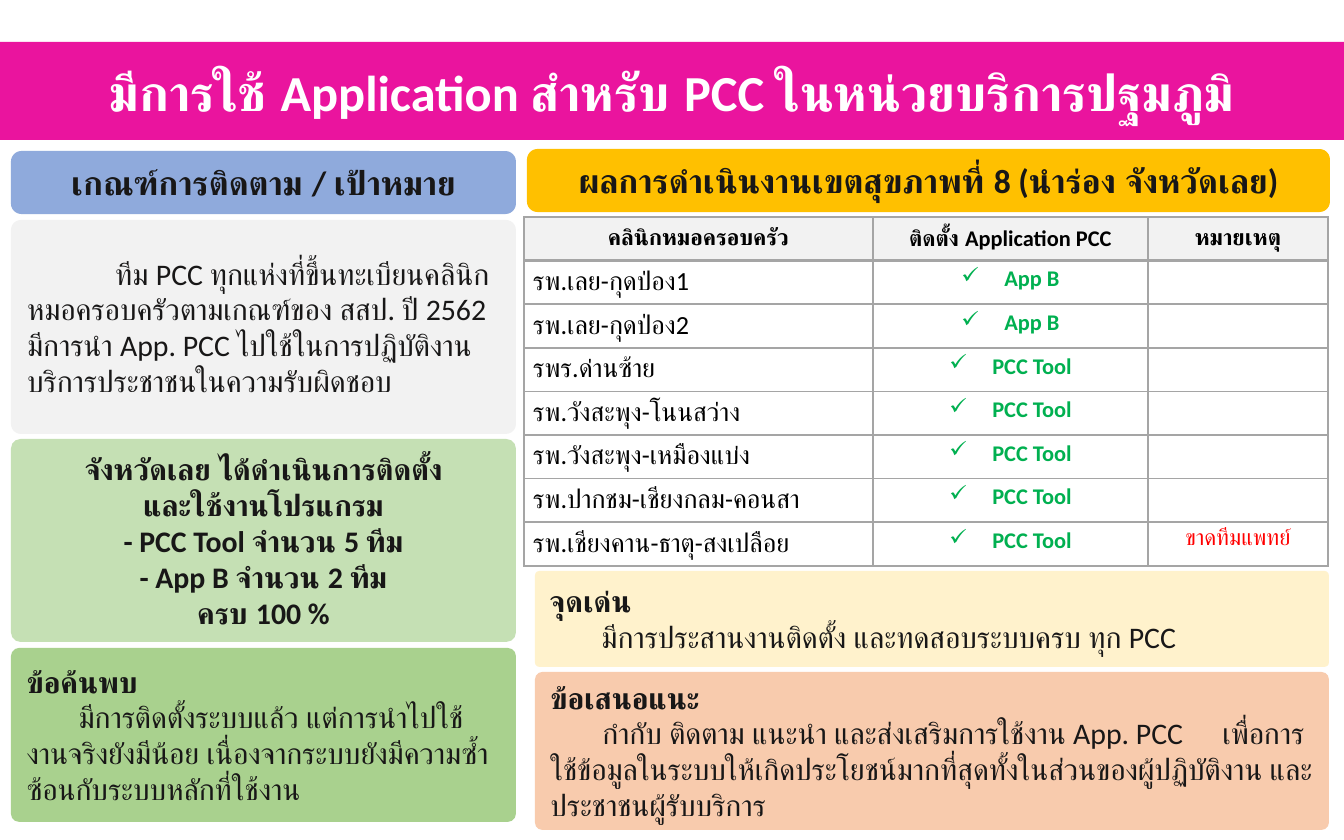
from pptx import Presentation
from pptx.dml.color import RGBColor
from pptx.enum.shapes import MSO_SHAPE
from pptx.enum.text import MSO_ANCHOR, PP_ALIGN
from pptx.oxml.xmlchemy import OxmlElement
from pptx.util import Pt

EMU_PER_PX = 914400 / 134.4
FONT = "Calibri"
RECT, ROUND = MSO_SHAPE.RECTANGLE, MSO_SHAPE.ROUNDED_RECTANGLE
LEFT, CENTER = PP_ALIGN.LEFT, PP_ALIGN.CENTER
TOP, MIDDLE = MSO_ANCHOR.TOP, MSO_ANCHOR.MIDDLE
PANEL_CORNER = 0.047
COLORS = {
    "pink": "EA149E", "blue": "8FAADC", "gray": "F2F2F2", "amber": "FFC000",
    "light_green": "C5E0B4", "green": "A9D18E", "peach": "F8CBAD",
    "cream": "FFF2CC", "white": "FFFFFF", "ink": "181717", "black": "000000",
    "check": "00B050", "red": "FF0000", "border": "A5A5A5",
}
TABLE_HEADERS = ["คลินิกหมอครอบครัว", "ติดตั้ง Application PCC", "หมายเหตุ"]
CLINICS = [
    ("รพ.เลย-กุดป่อง1", "App B", ""),
    ("รพ.เลย-กุดป่อง2", "App B", ""),
    ("รพร.ด่านซ้าย", "PCC Tool", ""),
    ("รพ.วังสะพุง-โนนสว่าง", "PCC Tool", ""),
    ("รพ.วังสะพุง-เหมืองแบ่ง", "PCC Tool", ""),
    ("รพ.ปากชม-เชียงกลม-คอนสา", "PCC Tool", ""),
    ("รพ.เชียงคาน-ธาตุ-สงเปลือย", "PCC Tool", "ขาดทีมแพทย์"),
]


def px(length):
    return round(length * EMU_PER_PX)


def color(name):
    return RGBColor.from_string(COLORS[name])


def add_run(paragraph, text, size, ink="ink", bold=False):
    run = paragraph.add_run()
    run.text = text
    run.font.name = FONT
    run.font.size = Pt(size)
    run.font.bold = bold
    run.font.color.rgb = color(ink)


def set_indent(paragraph, first_line, margin=0):
    properties = paragraph._p.get_or_add_pPr()
    properties.set("marL", str(px(margin)))
    properties.set("indent", str(px(first_line)))
    return properties


def add_tab_stop(paragraph, position):
    stops = OxmlElement("a:tabLst")
    stop = OxmlElement("a:tab")
    stop.set("pos", str(px(position)))
    stop.set("algn", "l")
    stops.append(stop)
    paragraph._p.get_or_add_pPr().append(stops)


def add_panel(slide, box, fill, kind=ROUND, corner=None):
    """Add a filled box and return its text frame."""
    panel = slide.shapes.add_shape(kind, *map(px, box))
    panel.shadow.inherit = False
    panel.fill.solid()
    panel.fill.fore_color.rgb = color(fill)
    panel.line.fill.background()
    if corner is not None:
        panel.adjustments[0] = corner
    frame = panel.text_frame
    frame.word_wrap = True
    frame.vertical_anchor = MIDDLE
    return frame


def add_heading(slide, box, fill, text, size=18, ink="ink", kind=ROUND):
    paragraph = add_panel(slide, box, fill, kind).paragraphs[0]
    paragraph.alignment = CENTER
    add_run(paragraph, text, size, ink, bold=True)


def add_summary(slide, box, fill, lines):
    frame = add_panel(slide, box, fill, corner=PANEL_CORNER)
    for index, line in enumerate(lines):
        paragraph = frame.add_paragraph() if index else frame.paragraphs[0]
        paragraph.alignment = CENTER
        add_run(paragraph, line, 16, bold=True)


def add_note(slide, box, fill, body, title="", indent=52, tab=None):
    """Add a panel with an optional bold title and an indented paragraph."""
    frame = add_panel(slide, box, fill, corner=PANEL_CORNER)
    paragraph = frame.paragraphs[0]
    if title:
        paragraph.alignment = LEFT
        add_run(paragraph, title, 16, bold=True)
        paragraph = frame.add_paragraph()
    paragraph.alignment = LEFT
    set_indent(paragraph, indent)
    if tab:
        add_tab_stop(paragraph, tab)
    add_run(paragraph, body, 16)


def set_borders(cell, top, bottom):
    properties = cell._tc.get_or_add_tcPr()
    widths = {"a:lnL": 1, "a:lnR": 1, "a:lnT": top, "a:lnB": bottom}
    for index, (tag, width) in enumerate(widths.items()):
        line = OxmlElement(tag)
        line.set("w", str(Pt(width)))
        fill = OxmlElement("a:solidFill")
        value = OxmlElement("a:srgbClr")
        value.set("val", COLORS["border"])
        fill.append(value)
        line.append(fill)
        properties.insert(index, line)


def add_check_bullet(paragraph):
    properties = set_indent(paragraph, -43, margin=43)
    bullet = OxmlElement("a:buChar")
    bullet.set("char", "✓")
    properties.append(bullet)


def fill_cell(cell, text, size, ink, bold, align, header):
    cell.fill.solid()
    cell.fill.fore_color.rgb = color("gray" if header else "white")
    cell.margin_left = cell.margin_right = px(9)
    cell.margin_top = cell.margin_bottom = px(5)
    cell.vertical_anchor = MIDDLE if header else TOP
    paragraph = cell.text_frame.paragraphs[0]
    paragraph.alignment = align
    if text:
        add_run(paragraph, text, size, ink, bold)
    else:
        end = OxmlElement("a:endParaRPr")
        end.set("sz", str(size * 100))
        paragraph._p.append(end)
    return paragraph


def add_clinic_table(slide, box, column_widths):
    rows = [TABLE_HEADERS, *CLINICS]
    table = slide.shapes.add_table(len(rows), len(column_widths), *map(px, box)).table
    table.first_row = table.horz_banding = False
    for column, width in zip(table.columns, column_widths):
        column.width = px(width)
    body_styles = [(14, "black", False, LEFT), (12, "check", True, CENTER),
                   (12, "red", False, CENTER)]
    header_style = (12, "black", True, CENTER)
    for r, texts in enumerate(rows):
        table.rows[r].height = px(box[3] / len(rows))
        header = r == 0
        for c, text in enumerate(texts):
            cell = table.cell(r, c)
            style = header_style if header else body_styles[c]
            paragraph = fill_cell(cell, text, *style, header)
            if c == 1 and not header:
                add_check_bullet(paragraph)
            set_borders(cell, top=2 if r == 1 else 1, bottom=2 if header else 1)


def add_criteria_column(slide, x, width):
    add_heading(slide, (x, 151, width, 63), "blue", "เกณฑ์การติดตาม / เป้าหมาย")
    add_note(slide, (x, 220, width, 214), "gray",
             "ทีม PCC ทุกแห่งที่ขึ้นทะเบียนคลินิกหมอครอบครัวตามเกณฑ์ของ สสป. ปี 2562 "
             "มีการนำ App. PCC ไปใช้ในการปฏิบัติงานบริการประชาชนในความรับผิดชอบ", indent=88)
    add_summary(slide, (x, 439, width, 203), "light_green",
                ["จังหวัดเลย ได้ดำเนินการติดตั้ง", "และใช้งานโปรแกรม",
                 "- PCC Tool จำนวน 5 ทีม", "- App B จำนวน 2 ทีม", "ครบ 100 %"])
    add_note(slide, (x, 648, width, 174), "green",
             "มีการติดตั้งระบบแล้ว แต่การนำไปใช้งานจริงยังมีน้อย "
             "เนื่องจากระบบยังมีความซ้ำซ้อนกับระบบหลักที่ใช้งาน", "ข้อค้นพบ")


def add_results_column(slide, x):
    add_heading(slide, (x + 3, 149, 803, 63), "amber",
                "ผลการดำเนินงานเขตสุขภาพที่ 8 (นำร่อง จังหวัดเลย)")
    add_clinic_table(slide, (x, 217, 804, 349), [349, 275, 180])
    add_note(slide, (x + 11, 571, 794, 96), "cream",
             "มีการประสานงานติดตั้ง และทดสอบระบบครบ ทุก PCC", "จุดเด่น")
    add_note(slide, (x + 11, 672, 794, 158), "peach",
             "กำกับ ติดตาม แนะนำ และส่งเสริมการใช้งาน App. PCC\tเพื่อการใช้ข้อมูลในระบบ"
             "ให้เกิดประโยชน์มากที่สุดทั้งในส่วนของผู้ปฏิบัติงาน และประชาชนผู้รับบริการ",
             "ข้อเสนอแนะ", tab=667)


def main():
    deck = Presentation()
    deck.slide_width, deck.slide_height = px(1344), px(840)
    slide = deck.slides.add_slide(deck.slide_layouts[6])
    add_heading(slide, (0, 42, 1344, 98), "pink",
                "มีการใช้ Application สำหรับ PCC ในหน่วยบริการปฐมภูมิ", 27, "white", RECT)
    add_criteria_column(slide, 11, 505)
    add_results_column(slide, 524)
    deck.save("out.pptx")


if __name__ == "__main__":
    main()
